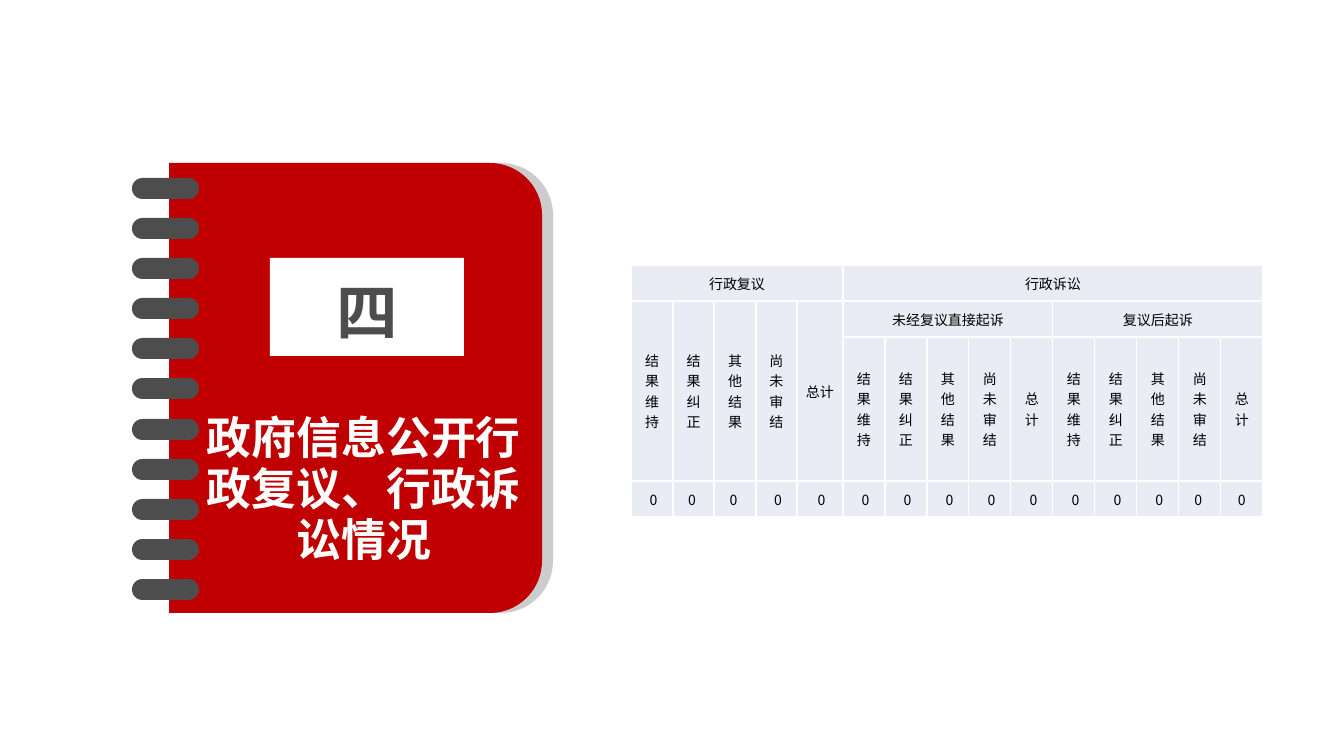
import pptx
import pptx.dml.color
import pptx.enum.shapes
import pptx.enum.text
import pptx.oxml
import pptx.oxml.ns
import pptx.util
from lxml import etree

SHAPES = pptx.enum.shapes.MSO_SHAPE
MIDDLE = pptx.enum.text.MSO_ANCHOR.MIDDLE
CENTER = pptx.enum.text.PP_ALIGN.CENTER


def px(length):
    return pptx.util.Emu(round(length * 914400 / 100.8))


def color(value):
    return pptx.dml.color.RGBColor.from_string(value)


class NotebookSlide:
    red, dark, shade, white, black = "C00000", "4D4D4D", "CCCCCC", "FFFFFF", "000000"
    cell_fill = "E9EBF5"
    font = "Noto Sans CJK SC"
    number_font = "Roboto Condensed"

    def __init__(self, deck):
        self.page = deck.slides.add_slide(deck.slide_layouts[6])

    def shape(self, kind, left, top, width, height, fill, corner=None):
        shape = self.page.shapes.add_shape(kind, px(left), px(top), px(width), px(height))
        shape.shadow.inherit = False
        shape.fill.solid()
        shape.fill.fore_color.rgb = color(fill)
        shape.line.fill.background()
        if corner is not None:
            shape.adjustments[0] = corner
        return shape

    def cover(self, left, top, width, height, fill):
        """A sheet rounded on its right side: a top-rounded one, turned a quarter."""
        shift = (width - height) / 2
        sheet = self.shape(SHAPES.ROUND_2_SAME_RECTANGLE, left + shift, top - shift,
                           height, width, fill, 0.14)
        sheet.rotation = 90

    def style(self, para, size, ink, bold=False, latin=None):
        para.alignment = CENTER
        para.font.size = pptx.util.Pt(size)
        para.font.bold = bold
        para.font.color.rgb = color(ink)
        para.font.name = latin or self.font
        defaults = para._p.pPr.find(pptx.oxml.ns.qn("a:defRPr"))
        etree.SubElement(defaults, pptx.oxml.ns.qn("a:ea"), typeface=self.font)

    def text(self, left, top, width, height, words, size, ink, latin=None, spacing=1.0):
        box = self.page.shapes.add_textbox(px(left), px(top), px(width), px(height))
        frame = box.text_frame
        frame.word_wrap = True
        frame.vertical_anchor = MIDDLE
        frame.margin_left = frame.margin_right = frame.margin_top = frame.margin_bottom = 0
        para = frame.paragraphs[0]
        para.text = words
        para.line_spacing = spacing
        self.style(para, size, ink, bold=True, latin=latin)

    def table(self, left, top, widths, heights):
        frame = self.page.shapes.add_table(len(heights), len(widths), px(left), px(top),
                                           px(sum(widths)), px(sum(heights)))
        table = frame.table
        table.first_row = table.horz_banding = False
        for column, width in zip(table.columns, widths):
            column.width = px(width)
        for row, height in zip(table.rows, heights):
            row.height = px(height)
        for cell in table.iter_cells():
            self.cell(cell)
        return table

    def cell(self, cell):
        cell.margin_left = cell.margin_right = px(8)
        cell.margin_top = cell.margin_bottom = 0
        cell.vertical_anchor = MIDDLE
        properties = cell._tc.get_or_add_tcPr()
        for side in ("lnL", "lnR", "lnT", "lnB"):
            properties.append(pptx.oxml.parse_xml(
                f'<a:{side} {pptx.oxml.ns.nsdecls("a")} w="12700"><a:solidFill>'
                f'<a:srgbClr val="{self.white}"/></a:solidFill></a:{side}>'))
        cell.fill.solid()
        cell.fill.fore_color.rgb = color(self.cell_fill)

    def entry(self, table, row, column, words, rows=1, columns=1):
        cell = table.cell(row, column)
        if rows > 1 or columns > 1:
            cell.merge(table.cell(row + rows - 1, column + columns - 1))
        para = cell.text_frame.paragraphs[0]
        para.text = words
        para.space_after = pptx.util.Pt(9)
        self.style(para, 10, self.black)


def main():
    deck = pptx.Presentation()
    deck.slide_width, deck.slide_height = px(1344), px(756)
    slide = NotebookSlide(deck)

    # Notebook
    slide.cover(180, 163, 373, 450, slide.shade)
    slide.cover(169, 163, 373, 450, slide.red)
    slide.shape(SHAPES.RECTANGLE, 270, 258, 194, 98, slide.white)
    for ring in range(11):
        slide.shape(SHAPES.ROUNDED_RECTANGLE, 132, 178 + round(ring * 40.1), 67, 21,
                    slide.dark, 0.5)

    # Section number and title
    slide.text(276, 274, 182, 74, "四", 44, slide.dark, latin=slide.number_font)
    slide.text(204, 397, 320, 187, "政府信息公开行政复议、行政诉讼情况", 32,
               slide.white, spacing=0.95)

    # Table headings
    outcomes = ["结果维持", "结果纠正", "其他结果", "尚未审结", "总计"]
    group = len(outcomes)
    table = slide.table(631, 265, [42, 41] * 2 + [46] + [42] * 10, [36, 36, 144, 36])
    slide.entry(table, 0, 0, "行政复议", columns=group)
    slide.entry(table, 0, group, "行政诉讼", columns=2 * group)
    slide.entry(table, 1, group, "未经复议直接起诉", columns=group)
    slide.entry(table, 1, 2 * group, "复议后起诉", columns=group)
    for index, outcome in enumerate(outcomes):
        slide.entry(table, 1, index, outcome, rows=2)
        slide.entry(table, 2, group + index, outcome)
        slide.entry(table, 2, 2 * group + index, outcome)

    # Counts, set beside a no-break space
    counts = [" 0", "0 ", "0 "] + [" 0"] * 10 + ["0 ", "0"]
    for column, count in enumerate(counts):
        slide.entry(table, 3, column, count)

    deck.save("out.pptx")


if __name__ == "__main__":
    main()
